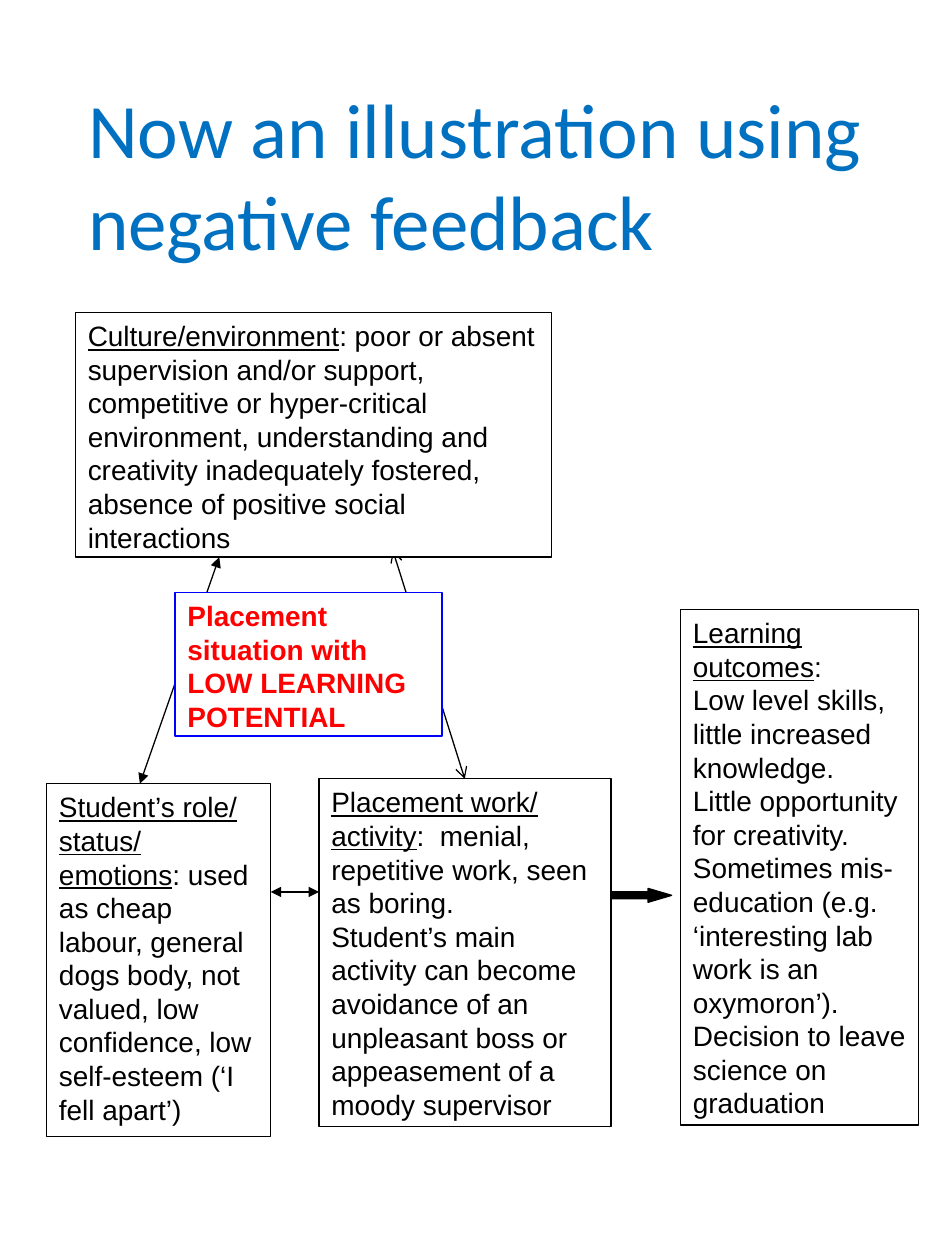
import pptx
import pptx.util
import pptx.dml.color
import pptx.enum.shapes
import pptx.enum.text
import pptx.oxml.xmlchemy
from dataclasses import dataclass

Cm, Pt = pptx.util.Cm, pptx.util.Pt
MSO_SHAPE = pptx.enum.shapes.MSO_SHAPE
ANCHOR = pptx.enum.text.MSO_ANCHOR
ALIGN = pptx.enum.text.PP_ALIGN
OxmlElement = pptx.oxml.xmlchemy.OxmlElement


@dataclass(frozen=True)
class Theme:
    title: str = "0070C0"
    ink: str = "000000"
    paper: str = "FFFFFF"
    alert: str = "FF0000"
    frame: str = "0000FF"
    title_font: str = "Calibri"
    body_font: str = "Arial"
    title_size: int = 44
    body_size: int = 16
    line_width: float = 0.75


THEME = Theme()

BOXES = {
    "student": ((0, 9.5, 4.52, 7.11), "Student’s role/ status/ emotions", [
        ": used as cheap labour, general dogs body, not valued, low confidence, "
        "low self-esteem (‘I fell apart’)"]),
    "work": ((5.49, 9.4, 5.89, 7.01), "Placement work/ activity", [
        ":  menial, repetitive work, seen as boring.",
        "Student’s main activity can become avoidance of an unpleasant boss or "
        "appeasement of a moody supervisor"]),
    "outcomes": ((12.78, 5.99, 4.8, 10.39), "Learning outcomes", [
        ":",
        "Low level skills, little increased knowledge.",
        "Little opportunity for creativity.",
        "Sometimes mis-education (e.g. ‘interesting lab work is an oxymoron’).",
        "Decision to leave science on graduation"]),
    "culture": ((0.58, 0, 9.6, 4.93), "Culture/environment", [
        ": poor or absent supervision and/or support, competitive or hyper-critical "
        "environment, understanding and creativity inadequately fostered, absence "
        "of positive social interactions"]),
}
SITUATION = (2.59, 5.64, 5.38, 2.9)


def rgb(value):
    return pptx.dml.color.RGBColor.from_string(value)


def apply(obj, values):
    for name, value in values.items():
        setattr(obj, name, value)


def add_run(p, text, color, size=THEME.body_size, font=THEME.body_font, **extra):
    r = p.add_run()
    r.text = text
    apply(r.font, {"size": Pt(size), "name": font, **extra})
    r.font.color.rgb = rgb(color)


def add_block(s, kind, origin, box, fill, line):
    x, y, w, h = box
    sp = s.shapes.add_shape(kind, Cm(origin[0] + x), Cm(origin[1] + y), Cm(w), Cm(h))
    sp.shadow.inherit = False
    sp.fill.solid()
    sp.fill.fore_color.rgb = rgb(fill)
    sp.line.color.rgb = rgb(line)
    sp.line.width = Pt(THEME.line_width)
    return sp


def add_text_box(s, origin, box, paragraphs, line=THEME.ink):
    sp = add_block(s, MSO_SHAPE.RECTANGLE, origin, box, THEME.paper, line)
    tf = sp.text_frame
    apply(tf, {"word_wrap": True, "vertical_anchor": ANCHOR.TOP})
    for i, runs in enumerate(paragraphs):
        p = tf.add_paragraph() if i else tf.paragraphs[0]
        p.alignment = ALIGN.LEFT
        for text, values in runs:
            add_run(p, text, **values)


def add_link(s, origin, start, end, tip):
    x, y = origin
    c = s.shapes.add_connector(
        pptx.enum.shapes.MSO_CONNECTOR.STRAIGHT,
        Cm(x + start[0]), Cm(y + start[1]), Cm(x + end[0]), Cm(y + end[1]))
    c.line.color.rgb = rgb(THEME.ink)
    c.line.width = Pt(THEME.line_width)
    ln = c.line._get_or_add_ln()
    for tag in ("a:headEnd", "a:tailEnd"):
        end_mark = OxmlElement(tag)
        end_mark.set("type", tip)
        ln.append(end_mark)
    c._element.spPr.append(OxmlElement("a:effectLst"))


def add_title(s, box):
    sp = s.shapes.title
    apply(sp, dict(zip(("left", "top", "width", "height"), map(Cm, box))))
    tf = sp.text_frame
    apply(tf, {"word_wrap": True, "vertical_anchor": ANCHOR.MIDDLE,
               "auto_size": pptx.enum.text.MSO_AUTO_SIZE.NONE})
    p = tf.paragraphs[0]
    p.alignment = ALIGN.LEFT
    add_run(p, "Now an illustration using negative feedback",
            THEME.title, THEME.title_size, THEME.title_font)


def add_diagram(s, origin):
    add_link(s, origin, (6.98, 4.8), (8.43, 9.4), "arrow")

    arrow = add_block(s, MSO_SHAPE.RIGHT_ARROW, origin, (11.38, 11.61, 1.22, 0.28),
                      THEME.ink, THEME.ink)
    arrow.adjustments[0] = 0.5
    arrow.adjustments[1] = 1.69

    plain = {"color": THEME.ink}
    for box, heading, (first, *rest) in BOXES.values():
        lead = [(heading, {**plain, "underline": True}), (first, plain)]
        add_text_box(s, origin, box, [lead] + [[(text, plain)] for text in rest])

    add_link(s, origin, (3.48, 4.93), (1.88, 9.5), "triangle")
    add_text_box(s, origin, SITUATION, [[
        ("Placement situation with LOW LEARNING POTENTIAL",
         {"color": THEME.alert, "bold": True})]], THEME.frame)
    add_link(s, origin, (4.52, 11.68), (5.49, 11.68), "triangle")


def main():
    prs = pptx.Presentation()
    apply(prs, {"slide_width": Cm(19.05), "slide_height": Cm(25.4)})
    s = prs.slides.add_slide(prs.slide_layouts[5])
    add_title(s, (1.52, 1.5, 16.2, 4.01))
    add_diagram(s, (0.94, 6.3))
    prs.save("out.pptx")


if __name__ == "__main__":
    main()
